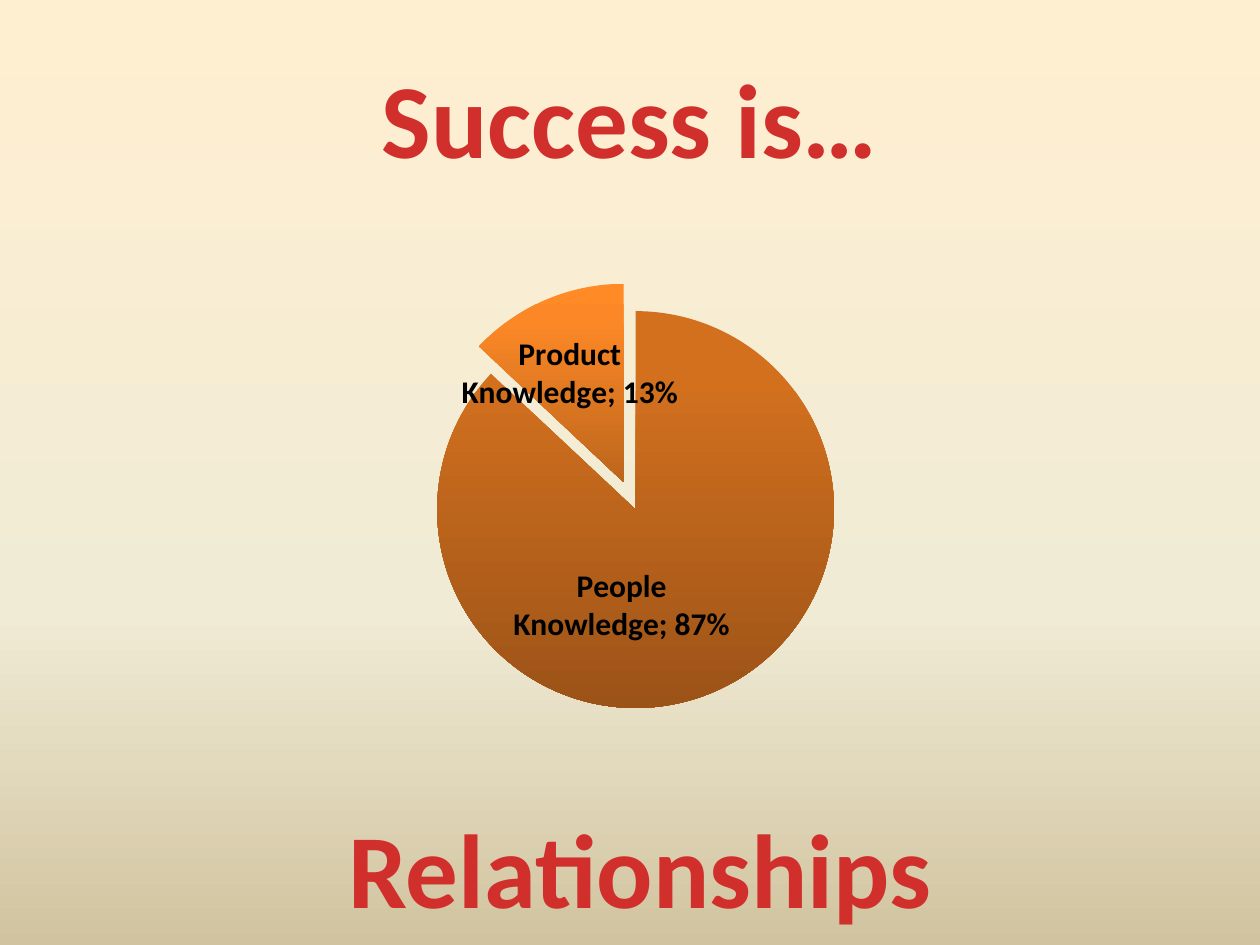
from dataclasses import dataclass

from lxml import etree
from pptx import Presentation
from pptx.chart.data import CategoryChartData
from pptx.dml.color import RGBColor
from pptx.enum.chart import XL_CHART_TYPE, XL_LABEL_POSITION
from pptx.enum.text import MSO_ANCHOR, PP_ALIGN
from pptx.oxml.ns import qn
from pptx.util import Pt

PIE = XL_CHART_TYPE.PIE
BEST_FIT = XL_LABEL_POSITION.BEST_FIT
MIDDLE = MSO_ANCHOR.MIDDLE
CENTER = PP_ALIGN.CENTER
EMU_PER_PX = 914400 // 126


@dataclass(frozen=True)
class Theme:
    font: str = "Calibri"
    headline_size: int = 60
    label_size: int = 18
    headline: str = "D02F2C"
    label: str = "000000"
    background: tuple = ((0, "FFEFD1"), (65, "F0EBD5"), (100, "D1C39F"))
    people: tuple = ((0, "D2701E"), (20, "D06F1E"), (100, "9C5318"))
    product: tuple = ((0, "FF8A26"), (20, "FB8726"), (100, "BC661C"))


THEME = Theme()
SLICES = (
    ("People Knowledge", 0.87, THEME.people, 0, (-0.18, -0.21)),
    ("Product Knowledge", 0.13, THEME.product, 15, (0.12, 0.19)),
)


def px(*lengths):
    return [length * EMU_PER_PX for length in lengths]


def fill_downward(fill, owner, stops):
    fill.gradient()
    gradient = list(owner.iter(qn("a:gradFill")))[-1]
    for child in list(gradient):
        gradient.remove(child)
    stop_list = etree.SubElement(gradient, qn("a:gsLst"))
    for percent, color in stops:
        stop = etree.SubElement(stop_list, qn("a:gs"), pos=str(percent * 1000))
        etree.SubElement(stop, qn("a:srgbClr"), val=color)
    etree.SubElement(gradient, qn("a:lin"), ang="5400000", scaled="0")


def style_font(font, size, color):
    font.name = THEME.font
    font.size = Pt(size)
    font.bold = True
    font.color.rgb = RGBColor.from_string(color)


def write_headline(holder, words):
    frame = holder.text_frame
    frame.word_wrap = True
    frame.vertical_anchor = MIDDLE
    paragraph = frame.paragraphs[0]
    paragraph.alignment = CENTER
    run = paragraph.add_run()
    run.text = words
    style_font(run.font, THEME.headline_size, THEME.headline)


def manual_layout(**settings):
    layout = etree.Element(qn("c:layout"))
    manual = etree.SubElement(layout, qn("c:manualLayout"))
    for setting, value in settings.items():
        etree.SubElement(manual, qn(f"c:{setting}"), val=str(value))
    return layout


def place_plot(chart):
    plot_area = next(chart.element.iter(qn("c:plotArea")))
    for layout in plot_area.findall(qn("c:layout")):
        plot_area.remove(layout)
    plot_area.insert(0, manual_layout(
        layoutTarget="inner", xMode="edge", yMode="edge",
        x=0.33, y=0.21, w=0.35, h=0.64))


def style_slice(series, index, stops, explosion, label_shift):
    point = series.points[index]
    fill_downward(point.format.fill, series._element, stops)
    point.format.line.fill.background()
    slice_xml = series._element.findall(qn("c:dPt"))[index]
    offset = etree.Element(qn("c:explosion"), val=str(explosion))
    slice_xml.find(qn("c:spPr")).addprevious(offset)

    label = point.data_label
    style_font(label.font, THEME.label_size, THEME.label)
    label.position = BEST_FIT
    label_xml = list(series._element.iter(qn("c:dLbl")))[index]
    label_xml.find(qn("c:showCatName")).set("val", "1")
    x, y = label_shift
    label_xml.insert(1, manual_layout(x=x, y=y))


def add_knowledge_pie(slide):
    data = CategoryChartData(number_format="0%")
    data.categories = [entry[0] for entry in SLICES]
    data.add_series("Series 1", [entry[1] for entry in SLICES])
    chart = slide.shapes.add_chart(PIE, *px(63, 179, 1134, 624), data).chart
    chart.has_title = False
    chart.has_legend = False
    style_font(chart.font, THEME.label_size, THEME.label)
    plot = chart.plots[0]
    plot.vary_by_categories = True
    plot.has_data_labels = True
    labels = plot.data_labels
    labels.show_value = True
    labels.show_category_name = True
    labels.number_format = "0%"
    labels.number_format_is_linked = False
    for index, (_, _, stops, explosion, shift) in enumerate(SLICES):
        style_slice(plot.series[0], index, stops, explosion, shift)
    place_plot(chart)


def main():
    deck = Presentation()
    deck.slide_width, deck.slide_height = px(1260, 945)
    slide = deck.slides.add_slide(deck.slide_layouts[5])
    fill_downward(slide.background.fill, slide._element, THEME.background)
    title = slide.shapes.title
    title.left, title.top, title.width, title.height = px(63, 38, 1134, 157)
    write_headline(title, "Success is…")
    add_knowledge_pie(slide)
    conclusion = slide.shapes.add_textbox(*px(73, 788, 1134, 157))
    write_headline(conclusion, "Relationships")
    deck.save("out.pptx")


if __name__ == "__main__":
    main()
